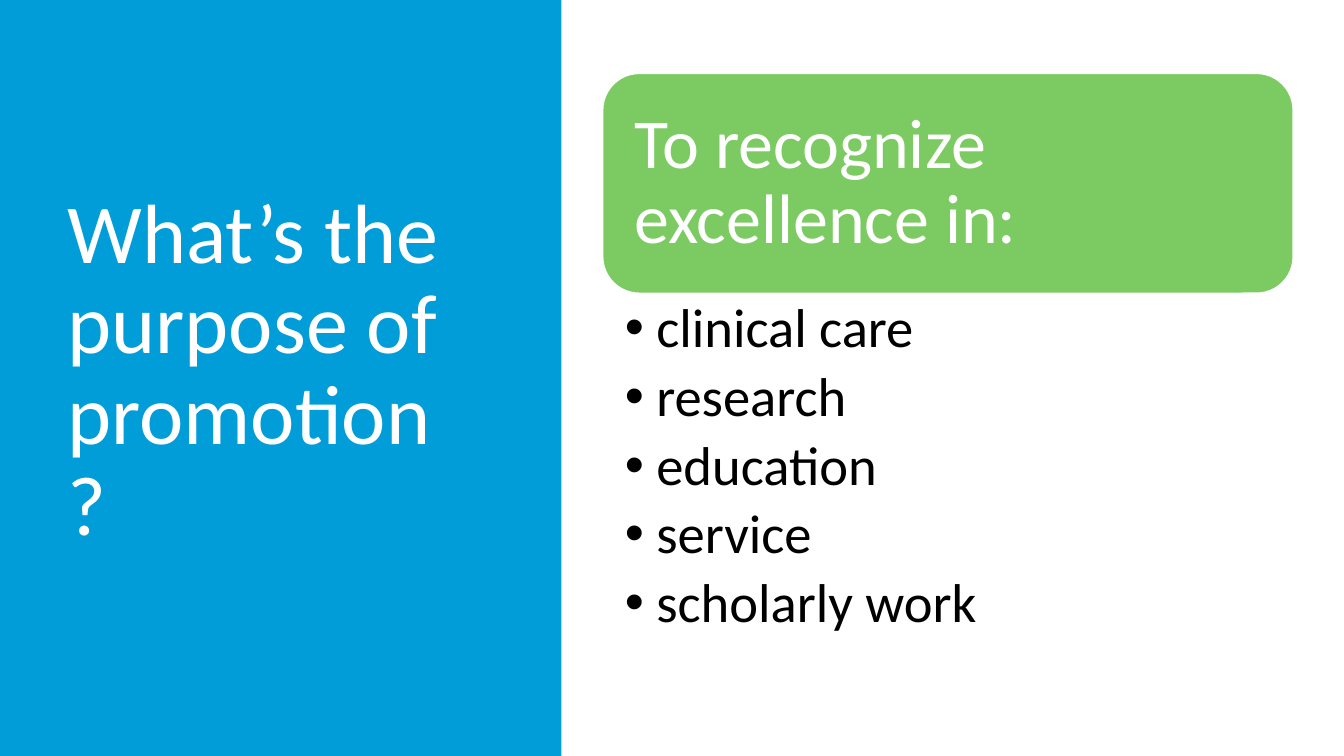
from lxml import etree
from pptx import Presentation
from pptx.dml.color import RGBColor
from pptx.enum.shapes import MSO_SHAPE
from pptx.enum.text import MSO_ANCHOR, MSO_AUTO_SIZE, PP_ALIGN
from pptx.oxml.ns import qn
from pptx.util import Cm, Pt

RECTANGLE = MSO_SHAPE.RECTANGLE
ROUNDED = MSO_SHAPE.ROUNDED_RECTANGLE
TOP, MIDDLE = MSO_ANCHOR.TOP, MSO_ANCHOR.MIDDLE
NO_FIT = MSO_AUTO_SIZE.NONE
LEFT = PP_ALIGN.LEFT
BLUE = RGBColor(0x00, 0x9D, 0xD9)
GREEN = RGBColor(0x7C, 0xCA, 0x62)
WHITE = RGBColor(0xFF, 0xFF, 0xFF)
BLACK = RGBColor(0x00, 0x00, 0x00)

SLIDE_WIDTH, SLIDE_HEIGHT = 33.87, 19.05
CONTENT_LEFT, CONTENT_WIDTH = 15.19, 17.4
HEADING_TOP, HEADING_HEIGHT = 1.85, 5.54
TOPICS = ["clinical care", "research", "education", "service", "scholarly work"]


def apply_format(target, values):
    for name, value in values.items():
        setattr(target, name, value)


class SlideBuilder:
    font_name = "Calibri"
    line_spacing = 0.9
    bullet_indent = Cm(0.79)

    def __init__(self, deck):
        self.page = deck.slides.add_slide(deck.slide_layouts[5])

    def fill_text(self, box, lines, size, color, anchor, margins, bullet=None, gap=0):
        frame = box.text_frame
        left, top, right, bottom = (Cm(margin) for margin in margins)
        apply_format(frame, {
            "word_wrap": True, "auto_size": NO_FIT, "vertical_anchor": anchor,
            "margin_left": left, "margin_top": top,
            "margin_right": right, "margin_bottom": bottom,
        })
        for index, line in enumerate(lines):
            para = frame.add_paragraph() if index else frame.paragraphs[0]
            apply_format(para, {
                "alignment": LEFT, "line_spacing": self.line_spacing,
                "space_before": Pt(0), "space_after": Pt(gap),
            })
            if bullet:
                self.add_bullet(para, bullet)
            span = para.add_run()
            span.text = line
            apply_format(span.font, {"name": self.font_name, "size": Pt(size)})
            span.font.color.rgb = color

    def add_bullet(self, para, bullet):
        properties = para._p.get_or_add_pPr()
        properties.set("marL", str(self.bullet_indent))
        properties.set("indent", str(-self.bullet_indent))
        etree.SubElement(properties, qn("a:buFont")).set("typeface", "Arial")
        etree.SubElement(properties, qn("a:buChar")).set("char", bullet)

    def add_panel(self, kind, bounds, fill, line=None):
        panel = self.page.shapes.add_shape(kind, *map(Cm, bounds))
        panel.shadow.inherit = False
        panel.fill.solid()
        panel.fill.fore_color.rgb = fill
        if line is None:
            panel.line.fill.background()
        else:
            panel.line.color.rgb = line
            panel.line.width = Pt(1)
        return panel

    def add_title(self, text, bounds, backdrop, **style):
        title = self.page.shapes.title
        apply_format(title, dict(zip(("left", "top", "width", "height"), map(Cm, bounds))))
        title.element.addprevious(backdrop.element)
        self.fill_text(title, [text], **style)

    def add_text(self, lines, bounds, **style):
        box = self.page.shapes.add_textbox(*map(Cm, bounds))
        self.fill_text(box, lines, **style)


def main():
    deck = Presentation()
    deck.slide_width, deck.slide_height = Cm(SLIDE_WIDTH), Cm(SLIDE_HEIGHT)
    builder = SlideBuilder(deck)

    sidebar = builder.add_panel(RECTANGLE, (0, 0, 14.15, SLIDE_HEIGHT), BLUE)
    builder.add_title("What’s the purpose of promotion?", (1.45, 1.73, 10.57, 15.29), sidebar,
                      size=60, color=WHITE, anchor=MIDDLE, margins=(0.25, 0.13, 0.25, 0.13))

    heading = builder.add_panel(
        ROUNDED, (CONTENT_LEFT, HEADING_TOP, CONTENT_WIDTH, HEADING_HEIGHT), GREEN, WHITE)
    builder.fill_text(heading, ["To recognize excellence in:"],
                      size=50, color=WHITE, anchor=MIDDLE, margins=(0.53,) * 4)

    builder.add_text(TOPICS, (CONTENT_LEFT, HEADING_TOP + HEADING_HEIGHT, CONTENT_WIDTH, 9.5),
                     size=39, color=BLACK, anchor=TOP, margins=(0.56, 0.18, 0.99, 0.18),
                     bullet="•", gap=7)
    deck.save("out.pptx")


if __name__ == "__main__":
    main()
